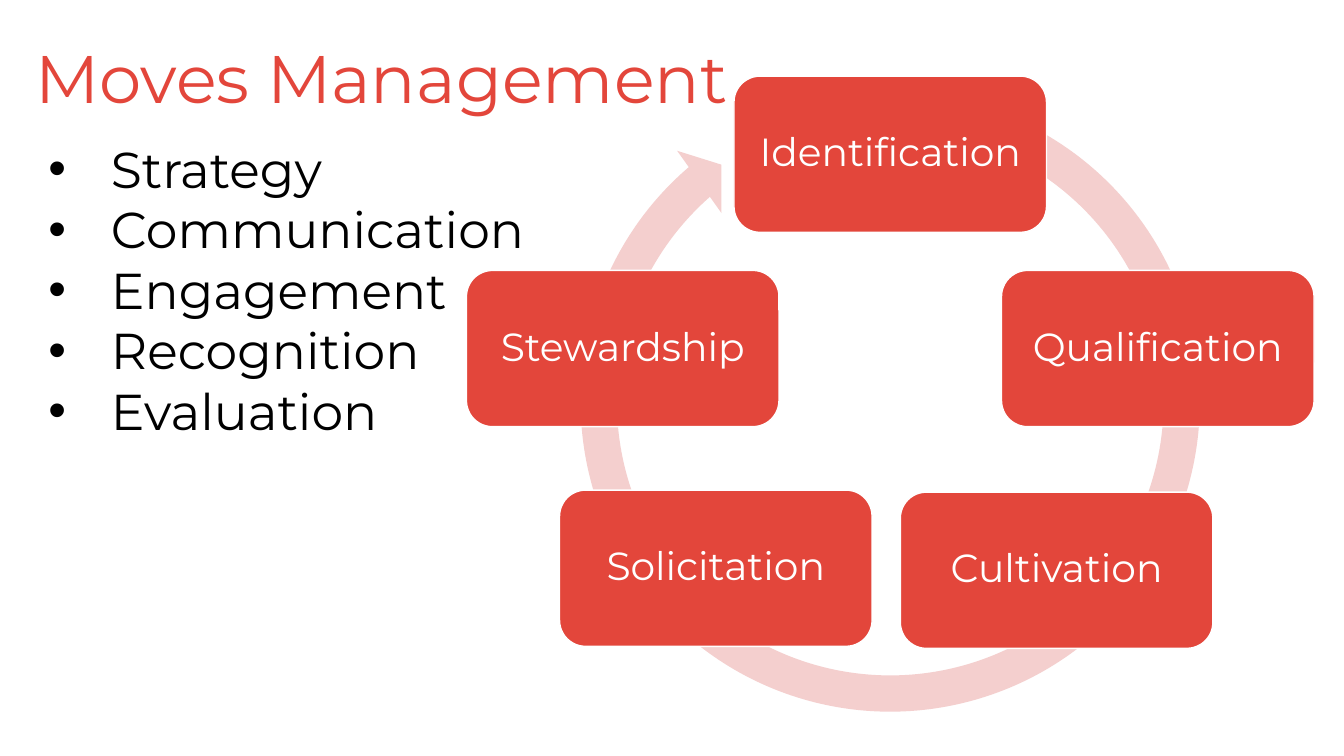
import math
from pptx import Presentation, util as u
from pptx.dml.color import RGBColor
from pptx.enum import shapes, text
from pptx.oxml.ns import qn
from lxml import etree

TITLE = "Moves Management"
POINTS = ["Strategy", "Communication", "Engagement", "Recognition", "Evaluation"]
STAGES = [
    ("Identification", 0, 0),
    ("Qualification", 0, 0),
    ("Cultivation", 0.01, -0.92),
    ("Solicitation", -0.09, -0.94),
    ("Stewardship", 0, 0),
]
COLORS = {"red": "E3463B", "pink": "F4CFCE", "black": "000000", "white": "FFFFFF"}
FONT = "Montserrat"
CYCLE_X, CYCLE_Y, RADIUS = 8.83, 4.32, 2.79
BOX_W, BOX_H = 3.1, 1.55
RING_TOP, RING_SIZE = 0.72, 6.54
RING_ADJUSTMENTS = [0.055, 3.307, 137.451, 174.048, 0.058]
INDENT = 0.62


def rgb(name):
    return RGBColor.from_string(COLORS[name])


def place(sp, *box):
    sp.left, sp.top, sp.width, sp.height = map(u.Inches, box)


def write(p, content, size, color, align=text.PP_ALIGN.LEFT, spacing=1.0, bullet=None):
    p.text = content
    p.alignment, p.line_spacing = align, spacing
    p.space_before = u.Pt(0)
    if bullet:
        pPr = p._p.get_or_add_pPr()
        pPr.set("marL", str(u.Inches(INDENT)))
        pPr.set("indent", str(-u.Inches(INDENT)))
        etree.SubElement(pPr, qn("a:buFont")).set("typeface", "Arial")
        etree.SubElement(pPr, qn("a:buChar")).set("char", bullet)
    font = p.runs[0].font
    font.name, font.size, font.color.rgb = FONT, u.Pt(size), rgb(color)


def add_filled(s, kind, box, fill):
    sp = s.shapes.add_shape(kind, *map(u.Inches, box))
    sp.shadow.inherit = False
    sp.fill.solid()
    sp.fill.fore_color.rgb = rgb(fill)
    sp.line.fill.background()
    return sp


def add_stage(s, i, name, dx, dy):
    angle = 2 * math.pi * i / len(STAGES)
    x = CYCLE_X + RADIUS * math.sin(angle) + dx
    y = CYCLE_Y - RADIUS * math.cos(angle) + dy
    box = (x - BOX_W / 2, y - BOX_H / 2, BOX_W, BOX_H)
    sp = add_filled(s, shapes.MSO_SHAPE.ROUNDED_RECTANGLE, box, "red")
    sp.line.color.rgb = rgb("white")
    sp.line.width = u.Pt(1)
    tf = sp.text_frame
    tf.vertical_anchor = text.MSO_ANCHOR.MIDDLE
    write(tf.paragraphs[0], name, 28, "white", text.PP_ALIGN.CENTER, 0.9)


def main():
    prs = Presentation()
    prs.slide_width, prs.slide_height = u.Inches(13.33), u.Inches(7.5)
    s = prs.slides.add_slide(prs.slide_layouts[1])

    title, body = s.placeholders
    place(title, 0.25, 0.4, 12.5, 1.35)
    title.text_frame.vertical_anchor = text.MSO_ANCHOR.TOP
    title.text_frame.auto_size = text.MSO_AUTO_SIZE.NONE
    write(title.text_frame.paragraphs[0], TITLE, 48, "red", spacing=0.9)

    place(body, 0.38, 1.32, 4.94, 3.13)
    tf = body.text_frame
    tf.auto_size = text.MSO_AUTO_SIZE.SHAPE_TO_FIT_TEXT
    for i, point in enumerate(POINTS):
        p = tf.add_paragraph() if i else tf.paragraphs[0]
        write(p, point, 36, "black", bullet="•")

    ring_box = (CYCLE_X - RING_SIZE / 2, RING_TOP, RING_SIZE, RING_SIZE)
    ring = add_filled(s, shapes.MSO_SHAPE.CIRCULAR_ARROW, ring_box, "pink")
    for i, value in enumerate(RING_ADJUSTMENTS):
        ring.adjustments[i] = value
    for i, stage in enumerate(STAGES):
        add_stage(s, i, *stage)

    prs.save("out.pptx")


if __name__ == "__main__":
    main()
